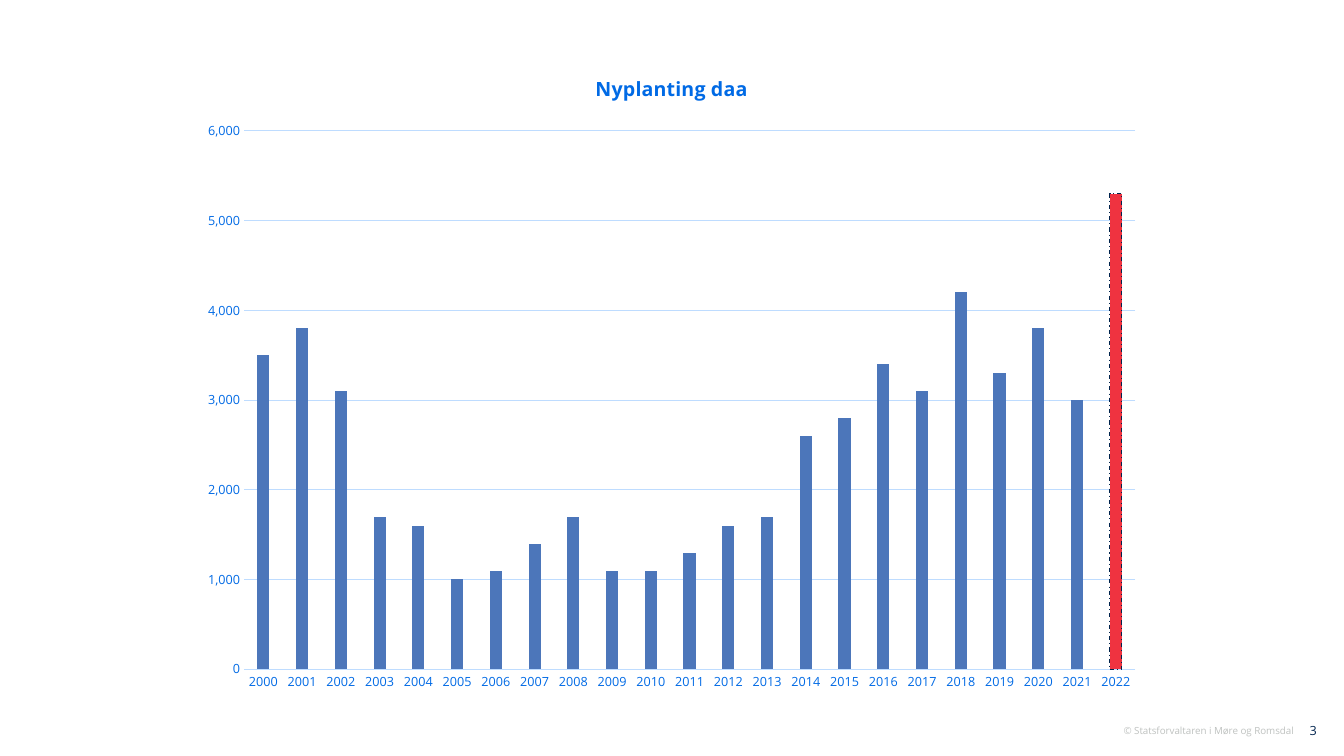
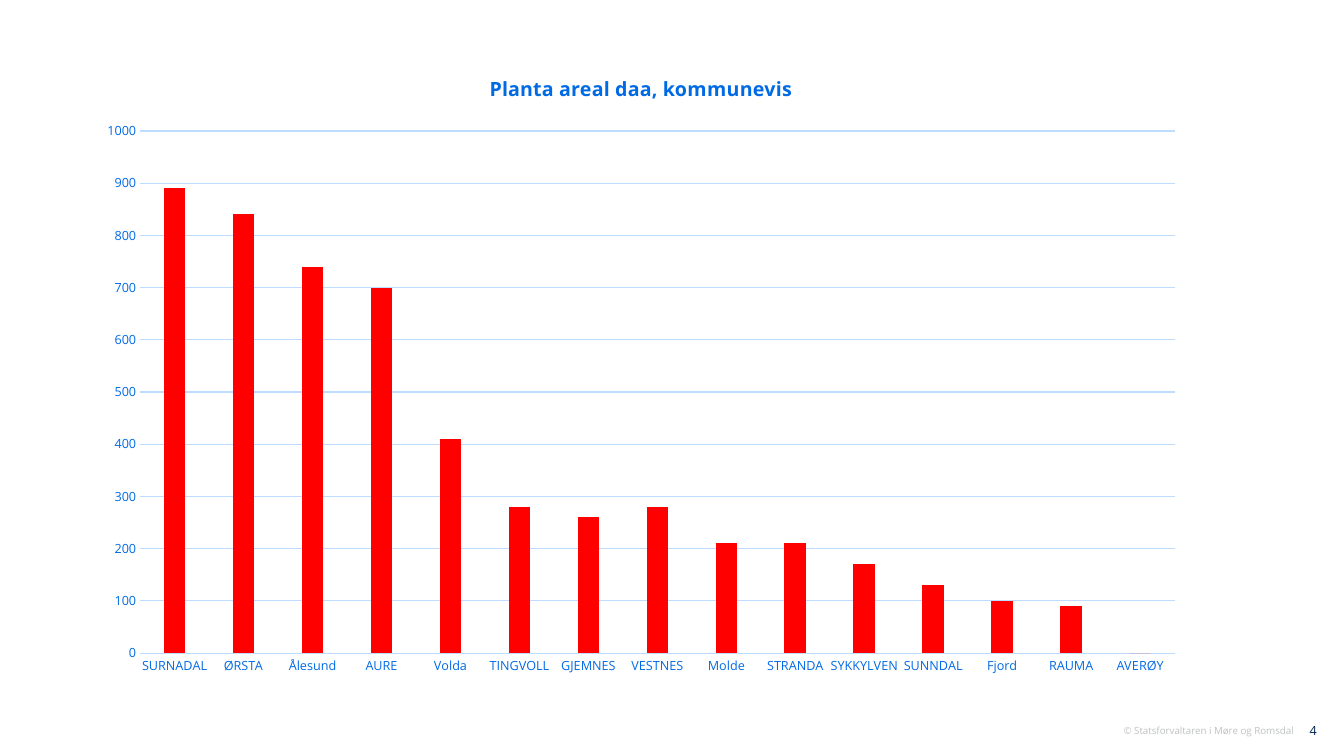
from lxml.etree import SubElement
from pptx import Presentation
from pptx.chart.data import CategoryChartData
from pptx.dml.color import RGBColor
from pptx.enum.chart import XL_CHART_TYPE, XL_TICK_MARK
from pptx.enum.dml import MSO_LINE
from pptx.enum.text import MSO_ANCHOR, PP_ALIGN
from pptx.oxml.ns import qn
from pptx.util import Inches, Pt

FONT = "Open Sans"
COLORS = {
    "navy": "00244E",
    "label": "006AE5",
    "grid": "BEDCFF",
    "footer": "BFC2C0",
    "bar": "4C76BA",
    "highlight": "EF3340",
    "red": "FF0000",
}
BLANK_LAYOUT = 6
TITLE_TOP = 0.69

PLANTING_BY_YEAR = dict(zip(map(str, range(2000, 2023)), [
    3500, 3800, 3100, 1700, 1600, 1000, 1100, 1400, 1700, 1100, 1100, 1300,
    1600, 1700, 2600, 2800, 3400, 3100, 4200, 3300, 3800, 3000, 5300]))
AREA_BY_MUNICIPALITY = {
    "SURNADAL": 890, "ØRSTA": 840, "Ålesund": 740, "AURE": 700, "Volda": 410,
    "TINGVOLL": 280, "GJEMNES": 260, "VESTNES": 280, "Molde": 210,
    "STRANDA": 210, "SYKKYLVEN": 170, "SUNNDAL": 130, "Fjord": 100,
    "RAUMA": 90, "AVERØY": 0,
}


def color(name):
    return RGBColor.from_string(COLORS[name])


def style_font(font, size, color_name, bold=False):
    font.name = FONT
    font.size = Pt(size)
    font.bold = bold
    font.color.rgb = color(color_name)


def add_footer_text(slide, box, text, size, color_name):
    frame = slide.shapes.add_textbox(*map(Inches, box)).text_frame
    frame.word_wrap = True
    frame.vertical_anchor = MSO_ANCHOR.MIDDLE
    paragraph = frame.paragraphs[0]
    paragraph.text = text
    paragraph.alignment = PP_ALIGN.RIGHT
    style_font(paragraph.font, size, color_name)


def add_footer(slide, number):
    add_footer_text(slide, (12.62, 7.12, 0.54, 0.26), str(number), 9, "navy")
    add_footer_text(slide, (10.85, 7.14, 2.08, 0.22),
                    "© Statsforvaltaren i Møre og Romsdal", 7, "footer")


def set_layout(element, index, settings):
    """Give a chart title or plot area a manual layout as its child at index."""
    for old_layout in element.findall(qn("c:layout")):
        element.remove(old_layout)
    layout = SubElement(element, qn("c:layout"))
    element.insert(index, layout)
    manual = SubElement(layout, qn("c:manualLayout"))
    for name, value in settings.items():
        SubElement(manual, qn(f"c:{name}")).set("val", str(value))


def place_title(chart, box, left, top):
    set_layout(chart.chart_title.element, 1, {
        "xMode": "edge", "yMode": "edge",
        "x": (left - box[0]) / box[2], "y": (top - box[1]) / box[3]})


def place_plot(chart, box, plot):
    plot_area = chart.element.find(".//" + qn("c:plotArea"))
    set_layout(plot_area, 0, {
        "layoutTarget": "inner", "xMode": "edge", "yMode": "edge",
        "x": (plot[0] - box[0]) / box[2], "y": (plot[1] - box[1]) / box[3],
        "w": plot[2] / box[2], "h": plot[3] / box[3]})


def style_axes(chart, maximum, step, number_format):
    category_axis, value_axis = chart.category_axis, chart.value_axis
    for axis in (category_axis, value_axis):
        axis.major_tick_mark = axis.minor_tick_mark = XL_TICK_MARK.NONE
        style_font(axis.tick_labels.font, 9, "label")
    value_axis.minimum_scale = 0
    value_axis.maximum_scale = maximum
    value_axis.major_unit = step
    value_axis.tick_labels.number_format = number_format
    value_axis.tick_labels.number_format_is_linked = False
    value_axis.format.line.fill.background()
    for line in (category_axis.format.line, value_axis.major_gridlines.format.line):
        line.color.rgb = color("grid")
        line.width = Pt(0.75)


def add_column_chart(slide, box, plot, title, title_left, values, bar_color,
                     maximum, step, number_format):
    """Place a column chart in box; plot and title_left are slide inches."""
    data = CategoryChartData()
    data.categories = list(values)
    data.add_series("Series 1", list(values.values()))
    chart = slide.shapes.add_chart(
        XL_CHART_TYPE.COLUMN_CLUSTERED, *map(Inches, box), data).chart
    chart.has_legend = False
    style_font(chart.font, 10, "navy")

    chart.has_title = True
    paragraph = chart.chart_title.text_frame.paragraphs[0]
    paragraph.text = title
    style_font(paragraph.font, 14, "label", bold=True)
    place_title(chart, box, title_left, TITLE_TOP)
    place_plot(chart, box, plot)
    style_axes(chart, maximum, step, number_format)

    columns = chart.plots[0]
    columns.vary_by_categories = False
    columns.gap_width = 219
    columns.overlap = -27
    fill = columns.series[0].format.fill
    fill.solid()
    fill.fore_color.rgb = color(bar_color)
    return chart


def highlight_column(chart, index):
    column_format = chart.plots[0].series[0].points[index].format
    column_format.fill.solid()
    column_format.fill.fore_color.rgb = color("highlight")
    column_format.line.color.rgb = color("navy")
    column_format.line.width = Pt(0.75)
    column_format.line.dash_style = MSO_LINE.DASH_DOT


def build_yearly_slide(slide):
    chart = add_column_chart(
        slide, (1.88, 0.51, 9.58, 6.47), (2.42, 1.3, 8.84, 5.34),
        "Nyplanting daa", 5.87, PLANTING_BY_YEAR, "bar", 6000, 1000, "#,##0")
    highlight_column(chart, len(PLANTING_BY_YEAR) - 1)


def build_municipality_slide(slide):
    add_column_chart(
        slide, (0.84, 0.52, 11.04, 6.31), (1.39, 1.3, 10.26, 5.18),
        "Planta areal daa, kommunevis", 4.82, AREA_BY_MUNICIPALITY, "red",
        1000, 100, "General")


def main():
    presentation = Presentation()
    presentation.slide_width = Inches(13.33)
    presentation.slide_height = Inches(7.5)
    builders = (build_yearly_slide, build_municipality_slide)
    for number, build in enumerate(builders, start=3):
        slide = presentation.slides.add_slide(
            presentation.slide_layouts[BLANK_LAYOUT])
        add_footer(slide, number)
        build(slide)
    presentation.save("out.pptx")


if __name__ == "__main__":
    main()
